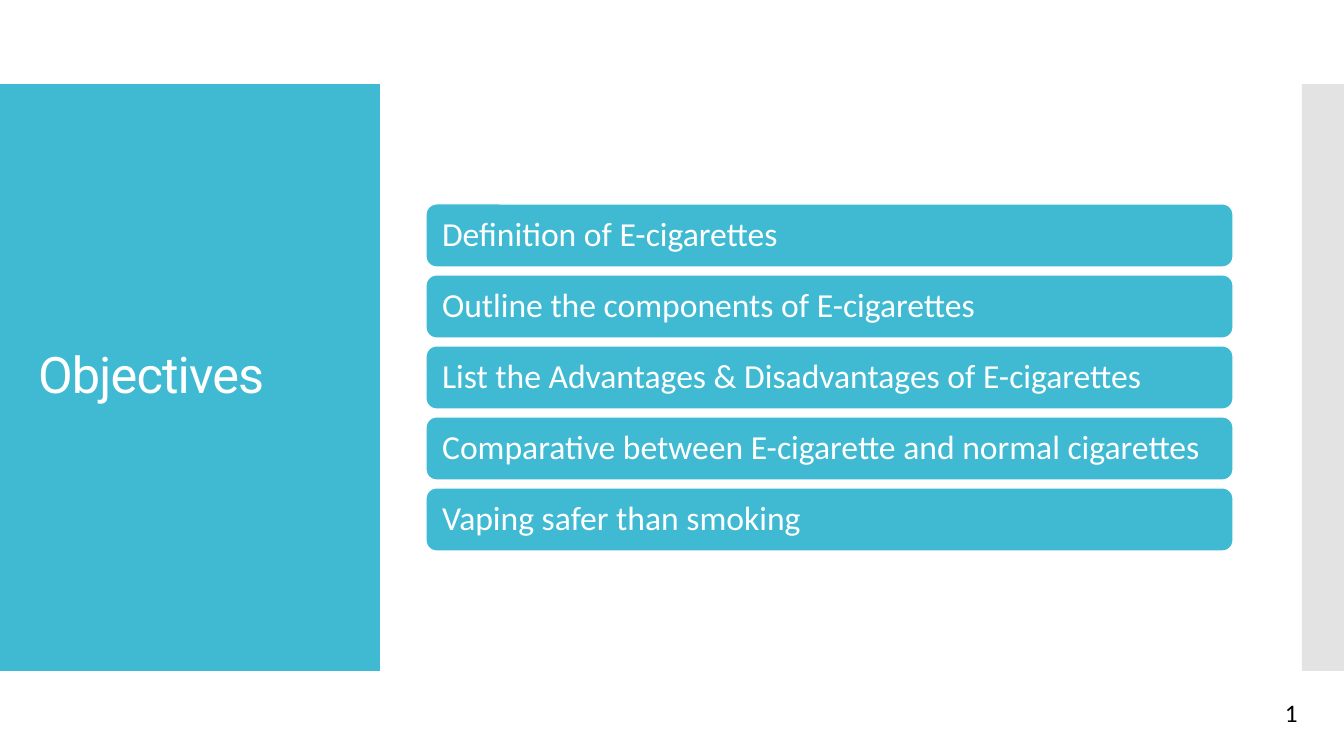
from dataclasses import dataclass

from pptx import Presentation
from pptx.dml.color import RGBColor
from pptx.enum.shapes import MSO_SHAPE
from pptx.enum.text import MSO_ANCHOR, MSO_AUTO_SIZE, PP_ALIGN
from pptx.oxml.ns import qn
from pptx.util import Pt
from lxml.etree import SubElement

EMU_PER_PX = 914400 / 100.8


@dataclass(frozen=True)
class Theme:
    accent: str = "40BAD2"
    strip: str = "C8C8C8"
    light: str = "FFFFFF"
    dark: str = "000000"
    heading_font: str = "Roboto"
    body_font: str = "Calibri"
    title_size: int = 36
    body_size: int = 24
    number_size: int = 18
    line_width: float = 0.85


THEME = Theme()
OBJECTIVES = [
    "Definition of E-cigarettes",
    "Outline the components of E-cigarettes",
    "List the Advantages & Disadvantages of E-cigarettes",
    "Comparative between E-cigarette and normal cigarettes",
    "Vaping safer than smoking",
]


def px(length):
    return round(length * EMU_PER_PX)


def set_all(target, values):
    for name, value in values.items():
        setattr(target, name, value)


def place(shape, box):
    set_all(shape, dict(zip(("left", "top", "width", "height"), map(px, box))))


def write(shape, text, font, size, colour, spacing=0.9, **frame_values):
    frame = shape.text_frame
    set_all(frame, {"word_wrap": True, "auto_size": MSO_AUTO_SIZE.NONE,
                    "vertical_anchor": MSO_ANCHOR.MIDDLE, **frame_values})
    para = frame.paragraphs[0]
    set_all(para, {"alignment": PP_ALIGN.LEFT, "line_spacing": spacing})
    span = para.add_run()
    span.text = text
    set_all(span.font, {"name": font, "size": Pt(size)})
    span.font.color.rgb = RGBColor.from_string(colour)
    return span


def add_block(page, box, colour, kind=MSO_SHAPE.RECTANGLE):
    block = page.shapes.add_shape(kind, *map(px, box))
    block.shadow.inherit = False
    block.fill.solid()
    block.fill.fore_color.rgb = RGBColor.from_string(colour)
    block.line.fill.background()
    return block


def add_title_panel(page, box, text):
    left, top, width, height = box
    panel = add_block(page, box, THEME.accent)
    title = page.shapes.title
    panel.element.addnext(title.element)
    place(title, (left + 28, top + 40, width - 55, height - 81))
    span = write(title, text, THEME.heading_font, THEME.title_size, THEME.light)
    span.font.element.set("spc", "-60") if hasattr(span.font, "element") else \
        span._r.get_or_add_rPr().set("spc", "-60")


def add_side_strip(page, box):
    strip = add_block(page, box, THEME.strip)
    colour = strip.element.spPr.find(qn("a:solidFill"))[0]
    SubElement(colour, qn("a:alpha")).set("val", "50000")


def add_objectives(page, box, texts):
    left, top, width, height = box
    gap = 8
    bar_height = (height - gap * (len(texts) - 1)) / len(texts)
    for index, text in enumerate(texts):
        bar_top = top + index * (bar_height + gap)
        bar = add_block(page, (left, bar_top, width, bar_height),
                        THEME.accent, MSO_SHAPE.ROUNDED_RECTANGLE)
        bar.line.color.rgb = RGBColor.from_string(THEME.light)
        bar.line.width = Pt(THEME.line_width)
        write(bar, text, THEME.body_font, THEME.body_size, THEME.light,
              margin_left=px(13), margin_right=px(13))


def add_page_number(page, box, number):
    label = page.shapes.add_textbox(*map(px, box))
    write(label, str(number), THEME.body_font, THEME.number_size, THEME.dark,
          spacing=1.0, word_wrap=False, vertical_anchor=MSO_ANCHOR.TOP)


def build_objectives_page(deck):
    page = deck.slides.add_slide(deck.slide_layouts[5])
    add_title_panel(page, (0, 84, 380, 587), "Objectives")
    add_side_strip(page, (1302, 84, 42, 587))
    add_objectives(page, (426, 204, 807, 347), OBJECTIVES)
    add_page_number(page, (1275, 692, 32, 40), 1)


def main():
    deck = Presentation()
    set_all(deck, {"slide_width": px(1344), "slide_height": px(756)})
    build_objectives_page(deck)
    deck.save("out.pptx")


if __name__ == "__main__":
    main()
